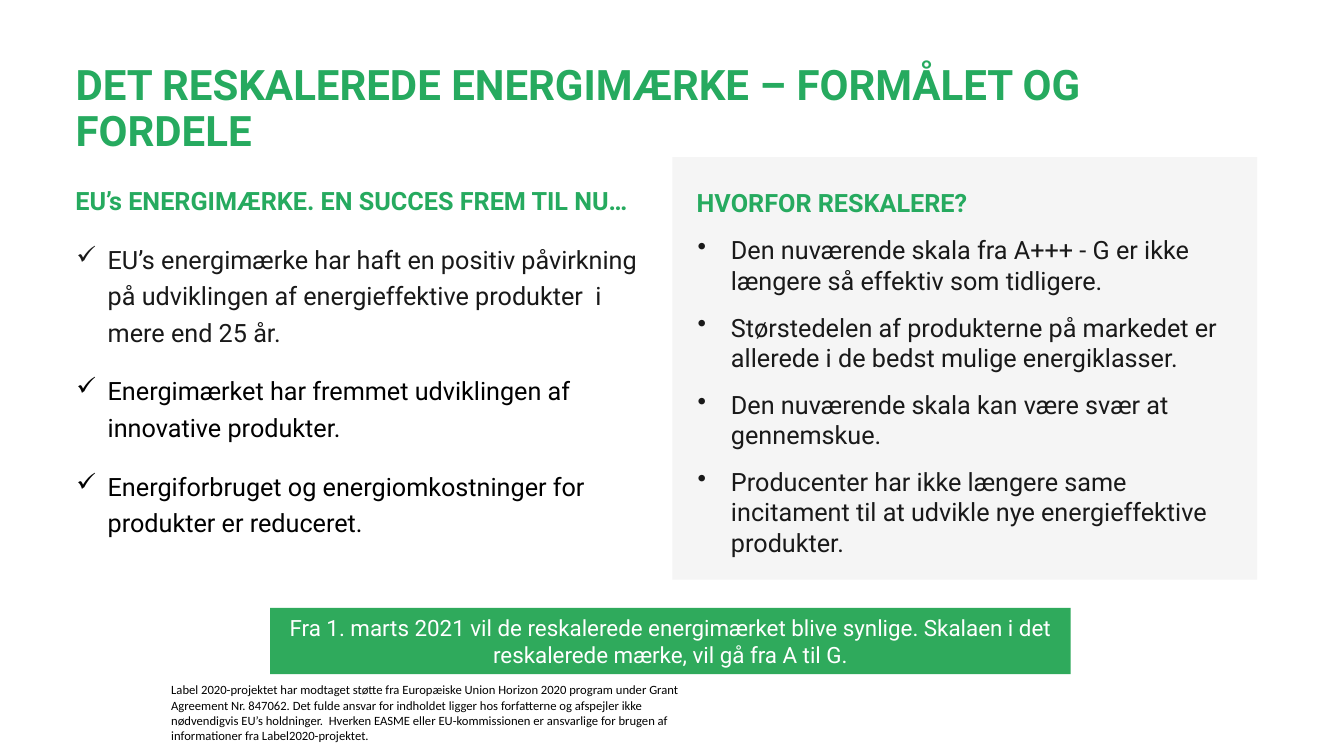
from pptx import Presentation
from pptx.dml.color import RGBColor
from pptx.enum.shapes import MSO_SHAPE
from pptx.enum.text import MSO_ANCHOR, MSO_AUTO_SIZE, PP_ALIGN
from pptx.oxml.ns import qn
from pptx.util import Inches, Pt
from lxml import etree

RECT = MSO_SHAPE.RECTANGLE
TOP, MIDDLE = MSO_ANCHOR.TOP, MSO_ANCHOR.MIDDLE
LEFT, CENTER = PP_ALIGN.LEFT, PP_ALIGN.CENTER
FIXED = MSO_AUTO_SIZE.NONE

COLORS = {
    "green": "26AA5F", "banner": "2FAA5C", "panel": "F5F5F5",
    "dark": "191919", "black": "000000", "white": "FFFFFF",
}


def color(name):
    return RGBColor.from_string(COLORS[name])


class Deck:
    """Holds the style and the current slide."""

    def __init__(self, font="Roboto"):
        self.font = font
        self.prs = Presentation()
        self.prs.slide_width = Inches(13.33)
        self.prs.slide_height = Inches(7.5)
        self.slide = self.prs.slides.add_slide(self.prs.slide_layouts[5])

    def style(self, para, size, ink, bold=False, font=None, align=LEFT):
        para.alignment = align
        for run in para.runs:
            run.font.name = font or self.font
            run.font.size = Pt(size)
            run.font.bold = bold
            run.font.color.rgb = color(ink)

    def frame(self, shape, anchor=TOP):
        frame = shape.text_frame
        frame.word_wrap = True
        frame.auto_size = FIXED
        frame.vertical_anchor = anchor
        return frame

    def title(self, text, box):
        shape = self.slide.shapes.title
        shape.left, shape.top, shape.width, shape.height = map(Inches, box)
        frame = self.frame(shape)
        frame.text = text
        para = frame.paragraphs[0]
        para.line_spacing = 0.9
        self.style(para, 30, "green", True)

    def text(self, box):
        return self.frame(self.slide.shapes.add_textbox(*map(Inches, box)))

    def block(self, box, fill, anchor=TOP):
        shape = self.slide.shapes.add_shape(RECT, *map(Inches, box))
        shape.shadow.inherit = False
        shape.fill.solid()
        shape.fill.fore_color.rgb = color(fill)
        shape.line.fill.background()
        return self.frame(shape, anchor)

    def head(self, frame, text, after):
        para = frame.paragraphs[0]
        para.text = text
        para.line_spacing = Pt(26)
        para.space_after = Pt(after)
        self.style(para, 18, "green", True)

    def bullet(self, frame, text, mark, indent, after, ink="dark", pitch=None):
        para = frame.add_paragraph()
        para.text = text
        props = para._p.get_or_add_pPr()
        props.set("marL", str(Inches(indent)))
        props.set("indent", str(Inches(0.01 - indent)))
        etree.SubElement(props, qn("a:buChar")).set("char", mark)
        para.line_spacing = pitch
        para.space_after = Pt(after)
        self.style(para, 18, ink)


def main():
    deck = Deck()

    # Title
    deck.title("DET RESKALEREDE ENERGIMÆRKE – FORMÅLET OG FORDELE",
               (0.65, 0.59, 12.01, 1.26))

    # Funding note
    note = deck.text((1.6, 6.72, 5.37, 0.75))
    note.text = (
        "Label 2020-projektet har modtaget støtte fra Europæiske Union "
        "Horizon 2020 program under Grant Agreement Nr. 847062. Det fulde "
        "ansvar for indholdet ligger hos forfatterne og afspejler ikke "
        "nødvendigvis EU’s holdninger.  Hverken EASME eller EU-kommissionen "
        "er ansvarlige for brugen af informationer fra Label2020-projektet.")
    deck.style(note.paragraphs[0], 9, "black", font="Calibri")

    # Left column: the success so far
    past = deck.text((0.65, 1.73, 5.8, 4.2))
    deck.head(past, "EU’s ENERGIMÆRKE. EN SUCCES FREM TIL NU…", 16)
    for text, ink in (
        ("EU’s energimærke har haft en positiv påvirkning på udviklingen af "
         "energieffektive produkter  i mere end 25 år.", "dark"),
        ("Energimærket har fremmet udviklingen af innovative produkter.",
         "black"),
        ("Energiforbruget og energiomkostninger for produkter er reduceret.",
         "black"),
    ):
        deck.bullet(past, text, "✓", 0.32, 16, ink, Pt(26))

    # Right panel: reasons to rescale
    why = deck.block((6.67, 1.56, 5.8, 4.19), "panel")
    why.margin_left = why.margin_top = why.margin_right = Inches(0.24)
    deck.head(why, "HVORFOR RESKALERE?", 12)
    for text in (
        "Den nuværende skala fra A+++ - G er ikke længere så effektiv som "
        "tidligere.",
        "Størstedelen af produkterne på markedet er allerede i de bedst "
        "mulige energiklasser.",
        "Den nuværende skala kan være svær at gennemskue.",
        "Producenter har ikke længere same incitament til at udvikle nye "
        "energieffektive produkter.",
    ):
        deck.bullet(why, text, "•", 0.34, 12)

    # Banner
    banner = deck.block((2.68, 6.03, 7.94, 0.66), "banner", MIDDLE)
    banner.text = ("Fra 1. marts 2021 vil de reskalerede energimærket blive "
                   "synlige. Skalaen i det reskalerede mærke, vil gå fra A "
                   "til G.")
    deck.style(banner.paragraphs[0], 16, "white", align=CENTER)

    deck.prs.save("out.pptx")


if __name__ == "__main__":
    main()
